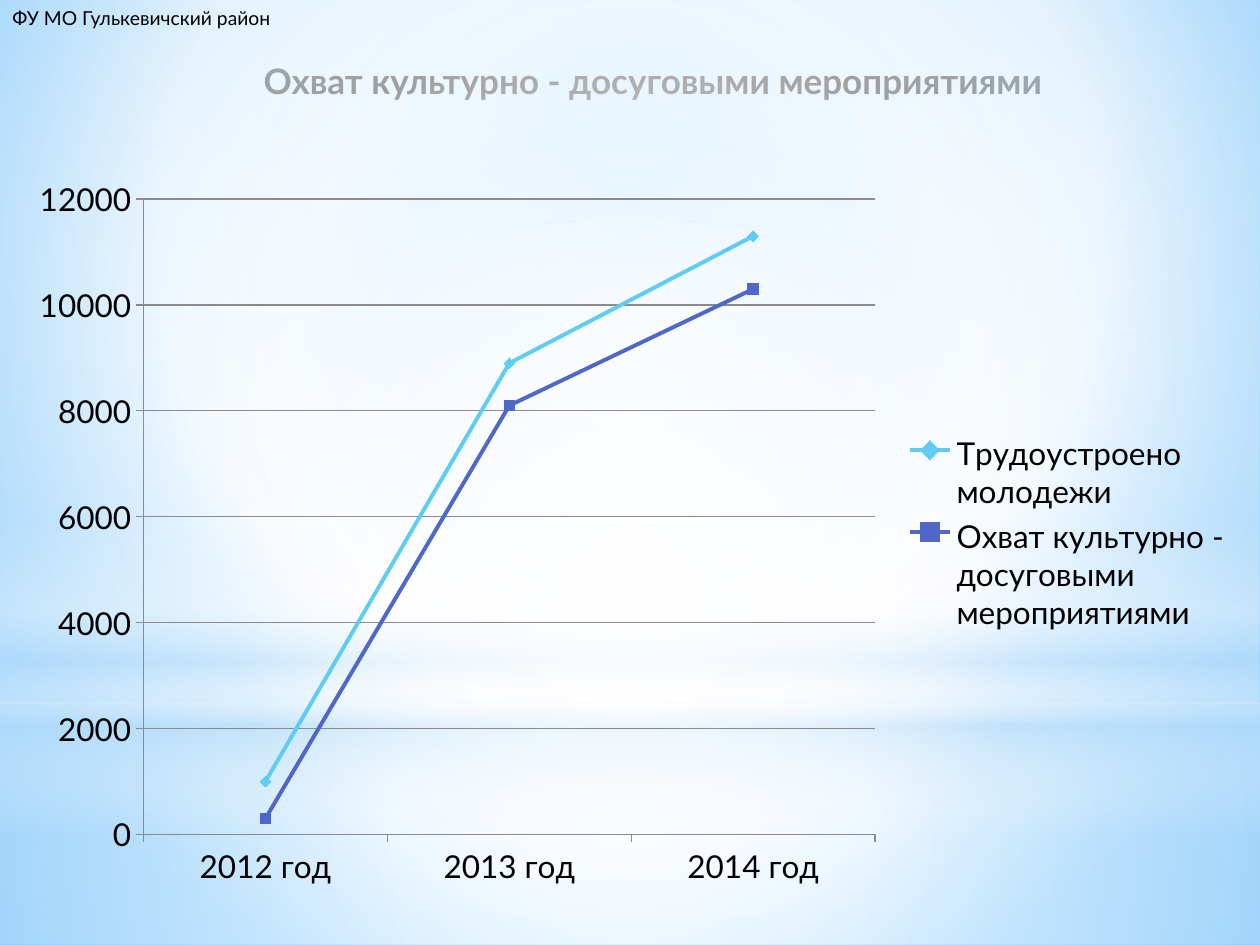
import pptx
import pptx.chart.data
import pptx.dml.color
import pptx.enum.chart
import pptx.enum.shapes
import pptx.enum.text
import pptx.oxml
import pptx.oxml.ns
import pptx.util

WIDTH, HEIGHT = 10, 7.5
FONT = "Lato"
BLACK, WHITE, SKY, GREY = "000000", "FFFFFF", "B4DCFA", "8B8B8B"
TITLE = "Охват культурно - досуговыми мероприятиями"
YEARS = ["2012 год", "2013 год", "2014 год"]
MARKERS = pptx.enum.chart.XL_MARKER_STYLE
SERIES = [
    (TITLE, (300, 8100, 10300), "4E67C8", MARKERS.SQUARE),
    ("Трудоустроено молодежи", (700, 800, 1000), "5ECCF3", MARKERS.DIAMOND),
]
CENTRE = (50, 50, 50, 50)
SHAPES = pptx.enum.shapes.MSO_SHAPE
GLOWS = [
    (SHAPES.RECTANGLE, (0, 0.744, 1, 0.256),
     [(0, WHITE, 91), (37, WHITE, 76), (100, SKY, 79)], CENTRE),
    (SHAPES.RECTANGLE, (0, 0, 1, 0.744),
     [(0, WHITE, 89), (48, WHITE, 62), (100, SKY, 79)], CENTRE),
    (SHAPES.RECTANGLE, (0, 0.55, 1, 0.333),
     [(0, WHITE, 0), (29, WHITE, 30), (45, SKY, 40), (55, WHITE, 26),
      (65, SKY, 60), (100, WHITE, 0)], None),
    (SHAPES.OVAL, (0, 0.233, 1, 0.744),
     [(0, WHITE, 100), (56, WHITE, 0)], CENTRE),
]


def colour(value):
    """Turn a hex string into a colour."""
    return pptx.dml.color.RGBColor.from_string(value)


def place(box):
    """Turn shares of the slide's size into lengths."""
    sizes = (WIDTH, HEIGHT, WIDTH, HEIGHT)
    return [pptx.util.Inches(share * size) for share, size in zip(box, sizes)]


def paint_gradient(owner, element, stops, focus):
    """Fill with a circular gradient around focus, or a vertical one."""
    owner.fill.solid()
    solid = next(element.iter(pptx.oxml.ns.qn("a:solidFill")))
    marks = "".join(
        f'<a:gs pos="{spot * 1000}"><a:srgbClr val="{value}">'
        f'<a:alpha val="{alpha * 1000}"/></a:srgbClr></a:gs>'
        for spot, value, alpha in stops)
    if focus:
        sides = " ".join(f'{side}="{share * 1000}"' for side, share in zip("ltrb", focus))
        course = f'<a:path path="circle"><a:fillToRect {sides}/></a:path>'
    else:
        course = '<a:lin ang="5400000" scaled="0"/>'
    gradient = pptx.oxml.parse_xml(
        f'<a:gradFill {pptx.oxml.ns.nsdecls("a")} rotWithShape="1">'
        f"<a:gsLst>{marks}</a:gsLst>{course}</a:gradFill>")
    solid.getparent().replace(solid, gradient)


def draw_backdrop(page):
    """Paint the background and the soft glows over it."""
    stops = [(0, "9ED5FF", 100), (60, WHITE, 100), (100, "5BB9FF", 100)]
    paint_gradient(page.background, page.element, stops, (20, 10, 20, 60))
    for kind, box, stops, focus in GLOWS:
        glow = page.shapes.add_shape(kind, *place(box))
        glow.shadow.inherit = False
        glow.line.fill.background()
        paint_gradient(glow, glow.element.spPr, stops, focus)


def style_font(font, size, bold=False):
    """Set the slide's typeface in black."""
    font.name, font.size, font.bold = FONT, pptx.util.Pt(size), bold
    font.color.rgb = colour(BLACK)


def write_line(shape, box, text, size, align, bold=False):
    """Put one line of text into a shape at the given box."""
    shape.left, shape.top, shape.width, shape.height = place(box)
    frame = shape.text_frame
    frame.word_wrap = False
    frame.auto_size = pptx.enum.text.MSO_AUTO_SIZE.NONE
    frame.vertical_anchor = pptx.enum.text.MSO_ANCHOR.TOP
    para = frame.paragraphs[0]
    para.alignment = align
    span = para.add_run()
    span.text = text
    style_font(span.font, size, bold)


def style_line(line, value, width):
    """Set the colour and width of a line."""
    line.color.rgb = colour(value)
    line.width = pptx.util.Pt(width)


def draw_chart(page, box):
    """Add the stacked line chart with its legend on the right."""
    data = pptx.chart.data.CategoryChartData()
    data.categories = YEARS
    for name, values, _, _ in SERIES:
        data.add_series(name, values)
    kind = pptx.enum.chart.XL_CHART_TYPE.LINE_MARKERS_STACKED
    chart = page.shapes.add_chart(kind, *place(box), data).chart
    style_font(chart.font, 18)
    chart.has_title = False
    chart.has_legend = True
    chart.legend.position = pptx.enum.chart.XL_LEGEND_POSITION.RIGHT
    chart.legend.include_in_layout = False
    for axis in (chart.category_axis, chart.value_axis):
        style_line(axis.format.line, GREY, 0.75)
        axis.major_tick_mark = pptx.enum.chart.XL_TICK_MARK.OUTSIDE
    chart.value_axis.has_major_gridlines = True
    style_line(chart.value_axis.major_gridlines.format.line, GREY, 0.75)
    chart.plots[0].vary_by_categories = False
    for series, (_, _, value, marker) in zip(chart.plots[0].series, SERIES):
        series.smooth = False
        style_line(series.format.line, value, 2.25)
        series.marker.style = marker
        series.marker.size = 6
        series.marker.format.fill.solid()
        series.marker.format.fill.fore_color.rgb = colour(value)
        series.marker.format.line.color.rgb = colour(value)


def main():
    """Build the slide and save it."""
    deck = pptx.Presentation()
    deck.slide_width = pptx.util.Inches(WIDTH)
    deck.slide_height = pptx.util.Inches(HEIGHT)
    page = deck.slides.add_slide(deck.slide_layouts.get_by_name("Title Only"))
    draw_backdrop(page)
    draw_chart(page, (0.012, 0.175, 0.976, 0.777))
    align = pptx.enum.text.PP_ALIGN
    write_line(page.shapes.title, (0.185, 0.056, 0.667, 0.059), TITLE, 20,
               align.CENTER, bold=True)
    header = page.shapes.add_textbox(0, 0, 0, 0)
    write_line(header, (0, 0, 0.225, 0.039), "ФУ МО Гулькевичский район", 11, align.LEFT)
    deck.save("out.pptx")


if __name__ == "__main__":
    main()
